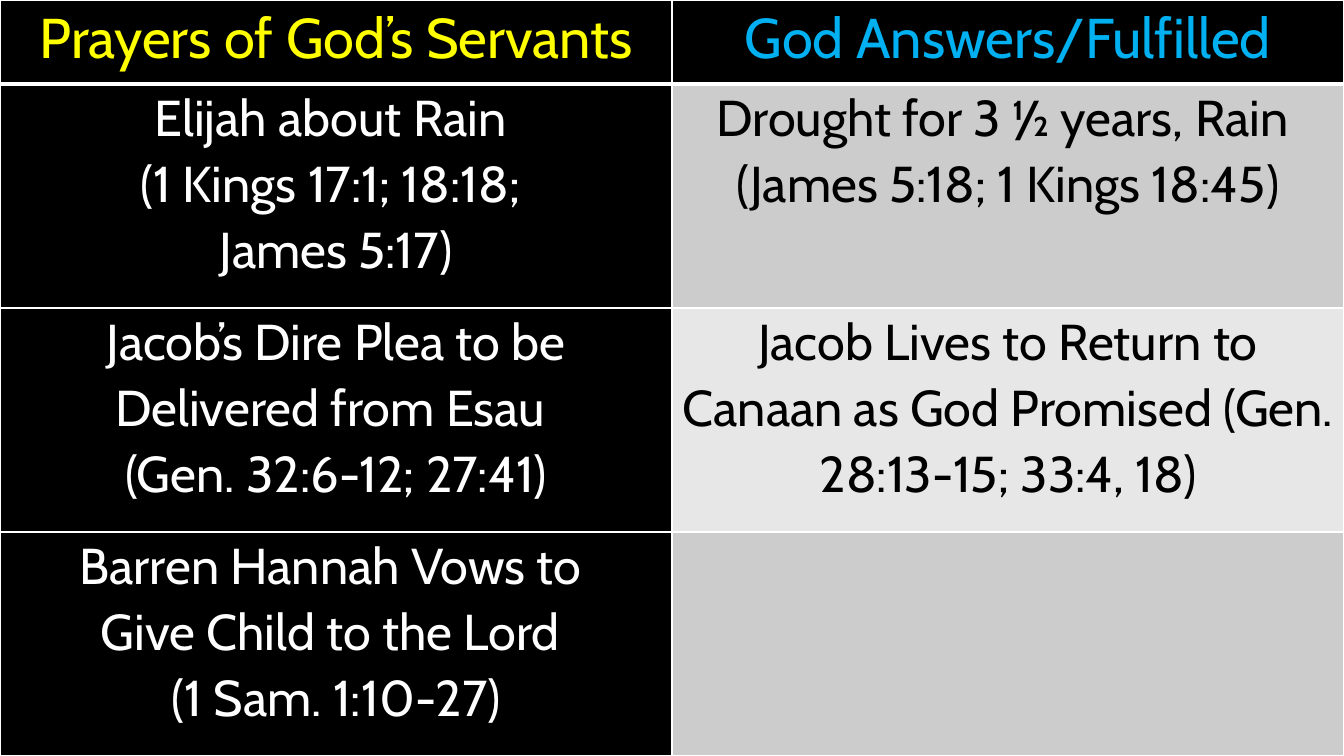
import pptx
import pptx.util
import pptx.dml.color
import pptx.enum.text
import pptx.oxml.ns
import lxml.etree

Pt = pptx.util.Pt
RGBColor = pptx.dml.color.RGBColor

BLACK = RGBColor(0x00, 0x00, 0x00)
WHITE = RGBColor(0xFF, 0xFF, 0xFF)
YELLOW = RGBColor(0xFF, 0xFF, 0x00)
BLUE = RGBColor(0x00, 0xB0, 0xF0)
GRAY = RGBColor(0xCC, 0xCC, 0xCC)
LIGHT_GRAY = RGBColor(0xE7, 0xE7, 0xE7)

FONT = "Cabin"
SLIDE_WIDTH, SLIDE_HEIGHT = Pt(960), Pt(540)
HEADER_HEIGHT = Pt(60)
HEADER_SIZE, BODY_SIZE = Pt(40), Pt(36)
THIN, THICK = Pt(1), Pt(3)

HEADERS = ["Prayers of God’s Servants", "God Answers/Fulfilled"]

# Each row: paragraphs of the prayer, paragraphs of the answer
PRAYERS = [
    (["Elijah about Rain ", "(1 Kings 17:1; 18:18; ", "James 5:17)"],
     ["Drought for 3 ½ years, Rain ", "(James 5:18; 1 Kings 18:45)"]),
    (["Jacob’s Dire Plea to be Delivered from Esau ", "(Gen. 32:6-12; 27:41)"],
     ["Jacob Lives to Return to Canaan as God Promised (Gen. 28:13-15; 33:4, 18)"]),
    (["Barren Hannah Vows to ", "Give Child to the Lord ", "(1 Sam. 1:10-27)"],
     []),
]


def set_borders(cell, top, bottom):
    """Draw white lines on all four sides of a cell."""
    properties = cell._tc.get_or_add_tcPr()
    qn = pptx.oxml.ns.qn
    for side, width in (("L", THIN), ("R", THIN), ("T", top), ("B", bottom)):
        line = lxml.etree.SubElement(properties, qn("a:ln" + side), w=str(width))
        fill = lxml.etree.SubElement(line, qn("a:solidFill"))
        lxml.etree.SubElement(fill, qn("a:srgbClr"), val=str(WHITE))


def add_lines(text_frame, lines, size, color):
    """Write one centred paragraph for each line."""
    for index, line in enumerate(lines):
        paragraph = text_frame.add_paragraph() if index else text_frame.paragraphs[0]
        paragraph.alignment = pptx.enum.text.PP_ALIGN.CENTER
        paragraph.line_spacing = 1.07
        run = paragraph.add_run()
        run.text = line
        run.font.name = FONT
        run.font.size = size
        run.font.bold = False
        run.font.color.rgb = color


def format_cell(cell, lines, size, color, fill, top=THIN, bottom=THIN):
    cell.margin_left = cell.margin_right = Pt(5)
    cell.margin_top = cell.margin_bottom = Pt(0)
    set_borders(cell, top, bottom)
    cell.fill.solid()
    cell.fill.fore_color.rgb = fill
    add_lines(cell.text_frame, lines, size, color)


def add_prayer_table(slide):
    frame = slide.shapes.add_table(
        len(PRAYERS) + 1, len(HEADERS), Pt(0), Pt(0), SLIDE_WIDTH, SLIDE_HEIGHT)
    table = frame.table

    # Header row
    table.rows[0].height = HEADER_HEIGHT
    for column, (header, color) in enumerate(zip(HEADERS, (YELLOW, BLUE))):
        format_cell(table.cell(0, column), [header], HEADER_SIZE, color, BLACK,
                    bottom=THICK)

    # Prayers on black, answers on alternating grays
    for row, (prayer, answer) in enumerate(PRAYERS, start=1):
        table.rows[row].height = (SLIDE_HEIGHT - HEADER_HEIGHT) // len(PRAYERS)
        top = THICK if row == 1 else THIN
        answer_fill = GRAY if row % 2 else LIGHT_GRAY
        format_cell(table.cell(row, 0), prayer, BODY_SIZE, WHITE, BLACK, top)
        format_cell(table.cell(row, 1), answer, BODY_SIZE, BLACK, answer_fill, top)


def main():
    presentation = pptx.Presentation()
    presentation.slide_width = SLIDE_WIDTH
    presentation.slide_height = SLIDE_HEIGHT
    slide = presentation.slides.add_slide(presentation.slide_layouts[6])
    slide.background.fill.solid()
    slide.background.fill.fore_color.rgb = BLACK
    add_prayer_table(slide)
    presentation.save("out.pptx")


if __name__ == "__main__":
    main()
